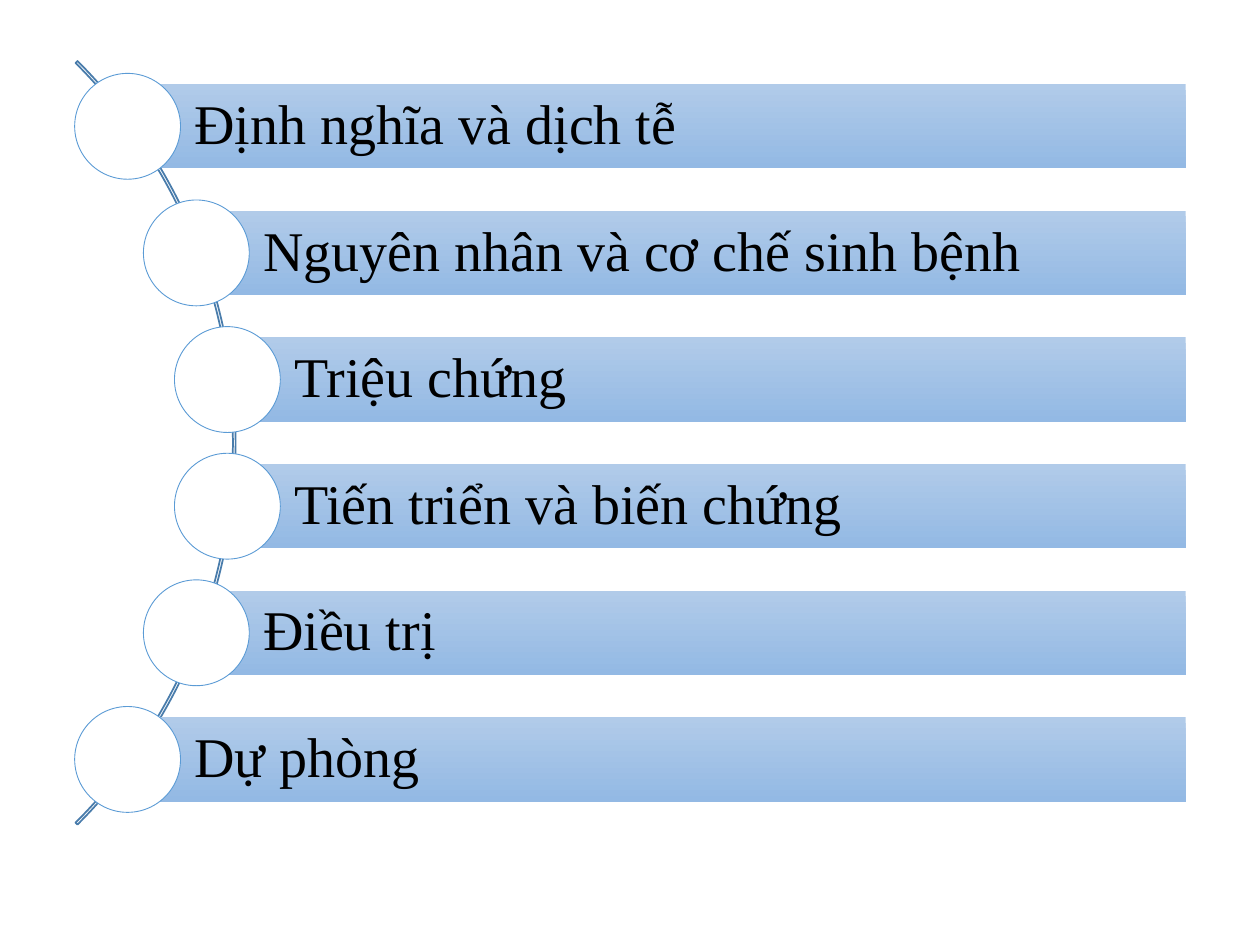
from dataclasses import dataclass
from math import sqrt

from pptx import Presentation
from pptx.dml.color import RGBColor as Rgb
from pptx.enum.shapes import MSO_SHAPE as Shape
from pptx.enum.text import MSO_ANCHOR as Anchor, PP_ALIGN as Align
from pptx.util import Inches, Pt

# Content
TOPICS = [
    "Định nghĩa và dịch tễ",
    "Nguyên nhân và cơ chế sinh bệnh",
    "Triệu chứng",
    "Tiến triển và biến chứng",
    "Điều trị",
    "Dự phòng",
]


@dataclass(frozen=True)
class Theme:
    font: str = "Times New Roman"
    size: float = 32
    text: str = "000000"
    bar_top: str = "B1CBE9"
    bar_bottom: str = "93B9E4"
    circle: str = "FFFFFF"
    circle_line: str = "5B9BD5"
    arc_line: str = "497CAB"


THEME = Theme()

# Layout in inches: circle centres follow a curve just inside the arc
WIDTH, HEIGHT = 10, 7.5
ARC_X, ARC_Y, ARC_SIZE = -2.415, 3.515, 8.57
CURVE_RADIUS = 4.25
ROW_PITCH = 1.005
BAR_HEIGHT, BAR_RIGHT = 0.67, 9.41
CIRCLE_SIZE = 0.84
TEXT_INSET, EDGE_INSET = 0.53, 0.09


def add_plain(page, kind, left, top, width, height):
    shape = page.shapes.add_shape(
        kind, Inches(left), Inches(top), Inches(width), Inches(height))
    shape.shadow.inherit = False
    return shape


def set_line(shape, color, points):
    shape.line.color.rgb = Rgb.from_string(color)
    shape.line.width = Pt(points)


def add_arc(page):
    arc = add_plain(page, Shape.BLOCK_ARC, ARC_X - ARC_SIZE / 2,
                    ARC_Y - ARC_SIZE / 2, ARC_SIZE, ARC_SIZE)
    # Start and end angle (315 and 45 degrees), then thickness
    for index, value in enumerate((189, 27, 0.0025)):
        arc.adjustments[index] = value
    arc.fill.background()
    set_line(arc, THEME.arc_line, 1)


def add_bar(page, topic, left, middle):
    bar = add_plain(page, Shape.RECTANGLE, left, middle - BAR_HEIGHT / 2,
                    BAR_RIGHT - left, BAR_HEIGHT)
    bar.line.fill.background()
    bar.fill.gradient()
    bar.fill.gradient_angle = 270
    for stop, color in zip(bar.fill.gradient_stops,
                           (THEME.bar_top, THEME.bar_bottom)):
        stop.color.rgb = Rgb.from_string(color)

    box = bar.text_frame
    box.word_wrap = True
    box.vertical_anchor = Anchor.MIDDLE
    box.margin_left = Inches(TEXT_INSET)
    box.margin_right = box.margin_top = box.margin_bottom = Inches(EDGE_INSET)
    para = box.paragraphs[0]
    para.alignment = Align.LEFT
    para.line_spacing = 0.9
    span = para.add_run()
    span.text = topic
    span.font.name = THEME.font
    span.font.size = Pt(THEME.size)
    span.font.color.rgb = Rgb.from_string(THEME.text)


def add_circle(page, center, middle):
    circle = add_plain(page, Shape.OVAL, center - CIRCLE_SIZE / 2,
                       middle - CIRCLE_SIZE / 2, CIRCLE_SIZE, CIRCLE_SIZE)
    circle.fill.solid()
    circle.fill.fore_color.rgb = Rgb.from_string(THEME.circle)
    set_line(circle, THEME.circle_line, 0.5)


def main():
    deck = Presentation()
    deck.slide_width, deck.slide_height = Inches(WIDTH), Inches(HEIGHT)
    page = deck.slides.add_slide(deck.slide_layouts[6])

    add_arc(page)
    for row, topic in enumerate(TOPICS):
        offset = (row - (len(TOPICS) - 1) / 2) * ROW_PITCH
        center = ARC_X + sqrt(CURVE_RADIUS ** 2 - offset ** 2)
        add_bar(page, topic, center, ARC_Y + offset)
        add_circle(page, center, ARC_Y + offset)

    deck.save("out.pptx")


if __name__ == "__main__":
    main()
